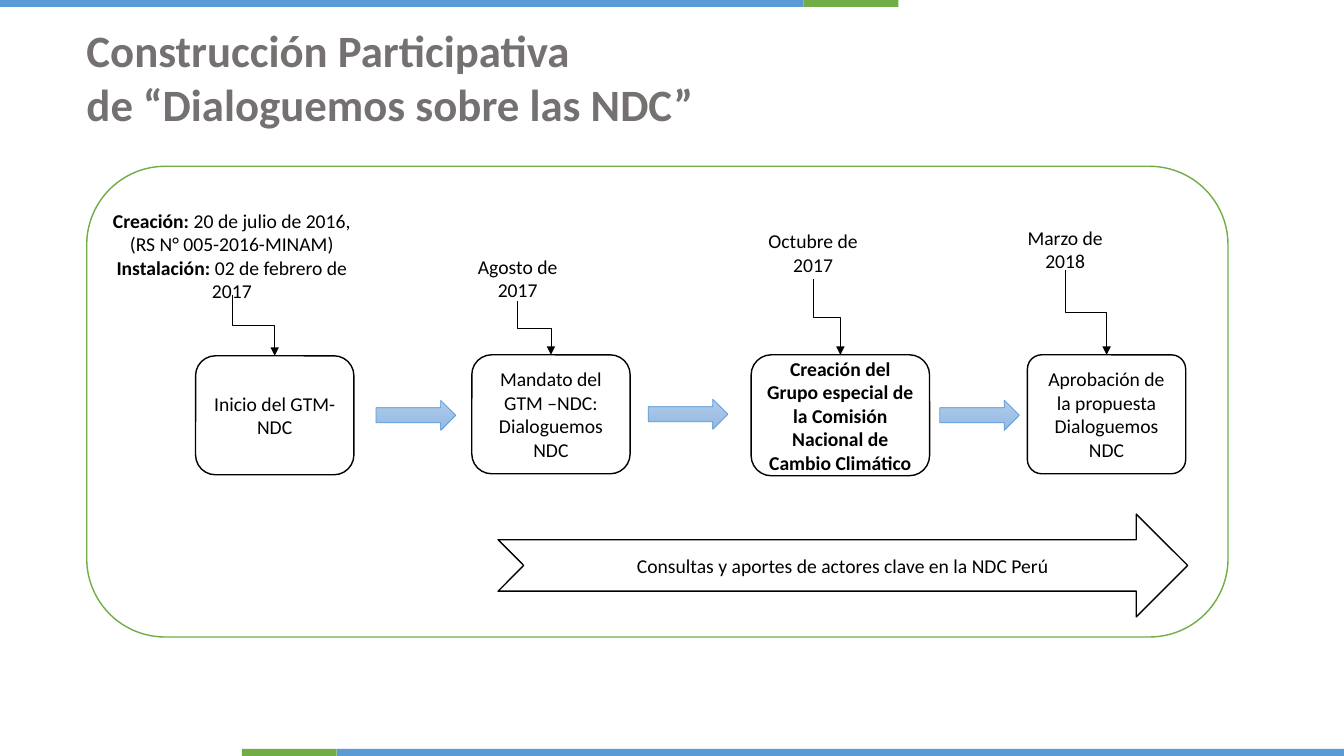
from pptx import Presentation
from pptx.dml.color import RGBColor
from pptx.enum.shapes import MSO_CONNECTOR, MSO_SHAPE
from pptx.enum.text import MSO_ANCHOR, PP_ALIGN
from pptx.oxml.ns import qn
from pptx.util import Inches, Pt
from lxml import etree

RECT, ROUND = MSO_SHAPE.RECTANGLE, MSO_SHAPE.ROUNDED_RECTANGLE
ARROW, NOTCHED = MSO_SHAPE.RIGHT_ARROW, MSO_SHAPE.NOTCHED_RIGHT_ARROW
ELBOW = MSO_CONNECTOR.ELBOW
CENTER, JUSTIFY = PP_ALIGN.CENTER, PP_ALIGN.JUSTIFY
TOP, MIDDLE = MSO_ANCHOR.TOP, MSO_ANCHOR.MIDDLE

BLUE = RGBColor(0x5B, 0x9B, 0xD5)
GREEN = RGBColor(0x70, 0xAD, 0x47)
GRAY = RGBColor(0x76, 0x71, 0x71)
BLACK = RGBColor(0, 0, 0)
WHITE = RGBColor(255, 255, 255)
ARROW_STOPS = [RGBColor(0xB1, 0xCB, 0xE9), RGBColor(0x93, 0xB9, 0xE4)]

# Content: a text is a list of paragraphs, each a list of (words, bold) runs
W, H = 13.33, 7.5
TITLE = [[("Construcción Participativa", True)],
         [("de “Dialoguemos sobre las NDC”", True)]]
CONSULTATION = [[("Consultas y aportes de actores clave en la NDC Perú", False)]]
STEPS = [
    {"date": [[("Creación: ", True), ("20 de julio de 2016,", False)],
              [("(RS N° 005-2016-MINAM)", False)],
              [("Instalación: ", True), ("02 de febrero de 2017", False)]],
     "date_box": (1, 2.14, 2.6, 0.79),
     "step": [[("Inicio del GTM-NDC", False)]],
     "step_box": (1.94, 3.53, 1.57, 1.18)},
    {"date": [[("Agosto de 2017", False)]],
     "date_box": (4.5, 2.53, 1.27, 0.46),
     "step": [[("Mandato del GTM –NDC: Dialoguemos NDC", False)]],
     "step_box": (4.68, 3.52, 1.57, 1.18)},
    {"date": [[("Octubre de 2017", False)]],
     "date_box": (7.36, 2.24, 1.41, 0.53),
     "step": [[("Creación del Grupo especial de la Comisión Nacional "
                "de Cambio Climático", True)]],
     "step_box": (7.45, 3.52, 1.77, 1.2)},
    {"date": [[("Marzo de 2018", False)]],
     "date_box": (9.93, 2.26, 1.27, 0.42),
     "step": [[("Aprobación de la propuesta Dialoguemos NDC", False)]],
     "step_box": (10.19, 3.52, 1.57, 1.18), "corner": 0.12},
]
NEXT_ARROWS = [(3.73, 3.97), (6.43, 3.96), (9.32, 3.97)]
BAND_H, GREEN_W = 0.07, 0.94
TOP_SPLIT, BOTTOM_SPLIT = 7.97, 3.34
BANDS = [
    (0, 0, TOP_SPLIT, BLUE), (TOP_SPLIT, 0, GREEN_W, GREEN),
    (BOTTOM_SPLIT, H - BAND_H, W - BOTTOM_SPLIT, BLUE),
    (BOTTOM_SPLIT - GREEN_W, H - BAND_H, GREEN_W, GREEN),
]


def write(s, paragraphs, size=14, color=BLACK, align=CENTER, anchor=MIDDLE):
    tf = s.text_frame
    tf.word_wrap = True
    tf.vertical_anchor = anchor
    for i, runs in enumerate(paragraphs):
        p = tf.add_paragraph() if i else tf.paragraphs[0]
        p.alignment = align
        for words, bold in runs:
            r = p.add_run()
            r.text = words
            for name, value in {"name": "Calibri", "size": Pt(size), "bold": bold}.items():
                setattr(r.font, name, value)
            r.font.color.rgb = color


def add_box(kind, box, fill=WHITE, line=None, width=1, text=None):
    s = shapes.add_shape(kind, *map(Inches, box))
    s.shadow.inherit = False
    s.fill.solid()
    s.fill.fore_color.rgb = fill
    if line is None:
        s.line.fill.background()
    else:
        s.line.color.rgb = line
        s.line.width = Pt(width)
    if text:
        write(s, text)
    return s


def add_drop(date_box, step_box):
    """Elbow from the bottom of a date down to the top of its step."""
    x1, y1 = date_box[0] + date_box[2] / 2, date_box[1] + date_box[3]
    x2, y2 = step_box[0] + step_box[2] / 2, step_box[1]
    # A quarter turn makes the elbow leave vertically, so its sides swap
    cx, cy, half_w, half_h = (x1 + x2) / 2, (y1 + y2) / 2, (y2 - y1) / 2, (x2 - x1) / 2
    ends = (cx - half_w, cy - half_h, cx + half_w, cy + half_h)
    s = shapes.add_connector(ELBOW, *map(Inches, ends))
    s.line.color.rgb = BLACK
    s.line.width = Pt(0.5)
    sp_pr = s.element.spPr
    xfrm = sp_pr.find(qn("a:xfrm"))
    xfrm.set("rot", str(270 * 60000))
    xfrm.set("flipH", "1")
    etree.SubElement(sp_pr.find(qn("a:ln")), qn("a:tailEnd")).set("type", "triangle")
    etree.SubElement(sp_pr, qn("a:effectLst"))


prs = Presentation()
prs.slide_width, prs.slide_height = Inches(W), Inches(H)
shapes = prs.slides.add_slide(prs.slide_layouts[6]).shapes

# Title and edge bands
title = shapes.add_textbox(*map(Inches, (0.76, 0.18, 8.36, 1.18)))
write(title, TITLE, 32, GRAY, JUSTIFY, TOP)
for x, y, w, color in BANDS:
    add_box(RECT, (x, y, w, BAND_H), color)

# Frame and consultation arrow
add_box(ROUND, (0.86, 1.65, 11.32, 4.67), line=GREEN)
add_box(NOTCHED, (4.94, 5.1, 6.84, 1.02), line=BLACK, text=CONSULTATION)

# Steps with their dates
for step in STEPS:
    s = add_box(ROUND, step["step_box"], line=BLACK, text=step["step"])
    if "corner" in step:
        s.adjustments[0] = step["corner"]
    add_box(RECT, step["date_box"], text=step["date"])
    add_drop(step["date_box"], step["step_box"])

# Arrows between steps
for x, y in NEXT_ARROWS:
    s = add_box(ARROW, (x, y, 0.79, 0.3), line=BLUE, width=0.5)
    s.fill.gradient()
    s.fill.gradient_angle = 270
    for stop, color in zip(s.fill.gradient_stops, ARROW_STOPS):
        stop.color.rgb = color

prs.save("out.pptx")
